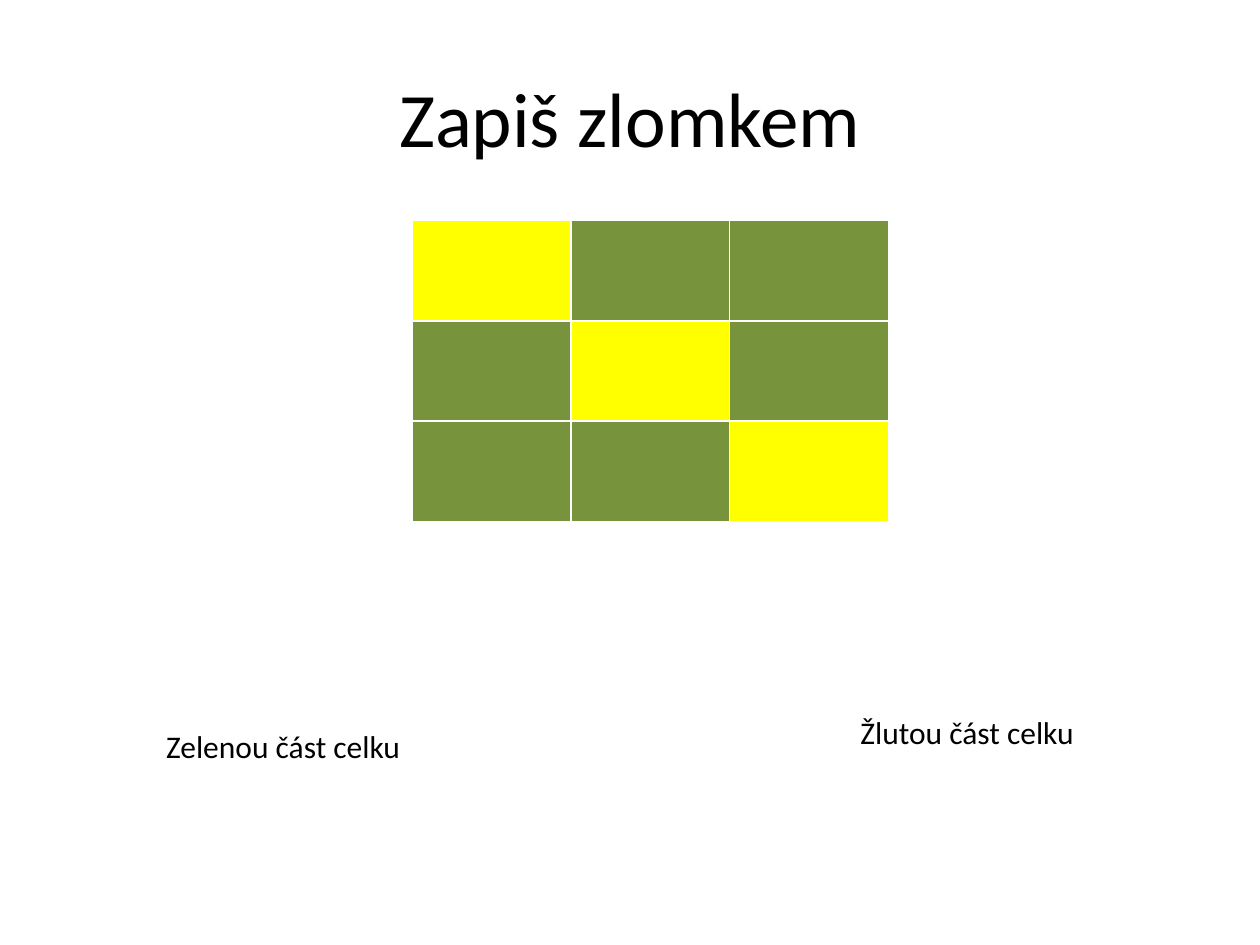
from pptx import Presentation
from pptx.dml.color import RGBColor
from pptx.enum.text import MSO_ANCHOR, MSO_AUTO_SIZE, PP_ALIGN
from pptx.util import Pt

BLACK = RGBColor(0x00, 0x00, 0x00)
GREEN = RGBColor(0x77, 0x93, 0x3C)
YELLOW = RGBColor(0xFF, 0xFF, 0x00)
FONT = "Calibri"

TITLE = "Zapiš zlomkem"
LABELS = [
    ("Zelenou část celku", 87.84, 411.84, 149.76),
    ("Žlutou část celku", 484.56, 403.92, 137.52),
]
GRID_SIZE = 3
GRID_LEFT, GRID_TOP = 235.44, 126
CELL_W, CELL_H = 90.72, 57.36


def add_run(p, text, size):
    r = p.add_run()
    r.text = text
    r.font.name = FONT
    r.font.size = Pt(size)
    r.font.color.rgb = BLACK


prs = Presentation()
prs.slide_width, prs.slide_height = Pt(720), Pt(540)
s = prs.slides.add_slide(prs.slide_layouts[5])

title = s.shapes.title
title.left, title.top, title.width, title.height = Pt(36), Pt(21.6), Pt(648), Pt(90)
tf = title.text_frame
tf.vertical_anchor = MSO_ANCHOR.MIDDLE
p = tf.paragraphs[0]
p.alignment = PP_ALIGN.CENTER
add_run(p, TITLE, 44)

table = s.shapes.add_table(
    GRID_SIZE, GRID_SIZE, Pt(GRID_LEFT), Pt(GRID_TOP),
    Pt(GRID_SIZE * CELL_W), Pt(GRID_SIZE * CELL_H),
).table
for row in range(GRID_SIZE):
    for col in range(GRID_SIZE):
        fill = table.cell(row, col).fill
        fill.solid()
        fill.fore_color.rgb = YELLOW if row == col else GREEN

for text, left, top, width in LABELS:
    sp = s.shapes.add_textbox(Pt(left), Pt(top), Pt(width), Pt(29))
    tf = sp.text_frame
    tf.word_wrap = False
    tf.auto_size = MSO_AUTO_SIZE.SHAPE_TO_FIT_TEXT
    add_run(tf.paragraphs[0], text, 18)

prs.save("out.pptx")
